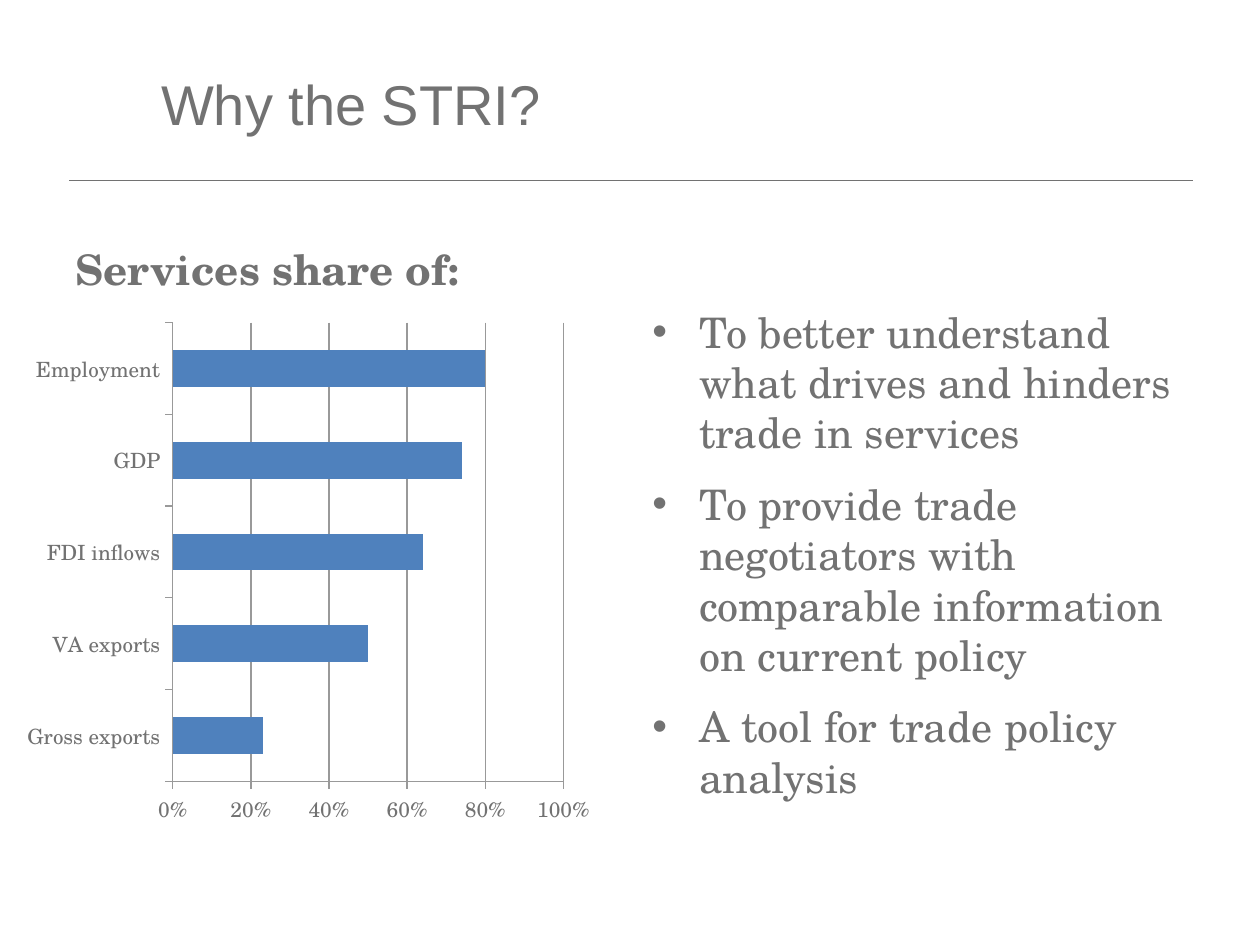
from lxml.etree import SubElement
from pptx import Presentation
from pptx.chart.data import CategoryChartData
from pptx.dml.color import RGBColor
from pptx.enum.chart import XL_CHART_TYPE as ChartType, XL_TICK_MARK as TickMark
from pptx.enum.shapes import MSO_CONNECTOR as Connector
from pptx.enum.text import MSO_ANCHOR as Anchor
from pptx.oxml import parse_xml
from pptx.oxml.ns import nsdecls, qn
from pptx.util import Inches, Pt

GREY = RGBColor(0x72, 0x72, 0x72)
GRID = RGBColor(0x99, 0x99, 0x99)
BLUE = RGBColor(0x4F, 0x81, 0xBD)
SERIF = "TeX Gyre Schola"
SHARES = {
    "Gross exports": 0.23,
    "VA exports": 0.5,
    "FDI inflows": 0.64,
    "GDP": 0.74,
    "Employment": 0.8,
}
REASONS = [
    "To better understand what drives and hinders trade in services",
    "To provide trade negotiators with comparable information on current policy",
    "A tool for trade policy analysis",
]


def style_font(font, size, name=SERIF, bold=False):
    """Apply the slide's grey text style to a font."""
    font.name, font.size, font.bold = name, Pt(size), bold
    font.color.rgb = GREY


def add_text(page, box, lines, anchor=Anchor.TOP):
    """Place a wrapped text box and return its paragraphs."""
    frame = page.shapes.add_textbox(*map(Inches, box)).text_frame
    frame.word_wrap = True
    frame.vertical_anchor = anchor
    frame.text = "\n".join(lines)
    return frame.paragraphs


def add_heading(page, box, text, anchor, size, name=SERIF, bold=False):
    """Place a one-line heading."""
    para = add_text(page, box, [text], anchor)[0]
    style_font(para.font, size, name, bold)


def add_rule(page, left, top, width):
    """Draw the thin line under the title."""
    start, end, height = Inches(left), Inches(left + width), Inches(top)
    rule = page.shapes.add_connector(Connector.STRAIGHT, start, height, end, height)
    rule.line.color.rgb = GREY
    rule.line.width = Pt(0.5)
    SubElement(rule._element.spPr, qn("a:effectLst"))


def add_reasons(page, box):
    """Place the bulleted list of reasons."""
    for index, para in enumerate(add_text(page, box, REASONS)):
        props = para._p.get_or_add_pPr()
        props.set("marL", str(Inches(0.37)))
        props.set("indent", str(-Inches(0.37)))
        para.space_before = Pt(6 if index else 0)
        para.space_after = Pt(6)
        color = SubElement(props, qn("a:buClr"))
        SubElement(color, qn("a:srgbClr"), val=str(GREY))
        SubElement(props, qn("a:buFont"), typeface="Arial")
        SubElement(props, qn("a:buChar"), char="•")
        style_font(para.font, 24)


def set_plot_area(chart, x, y, w, h):
    """Fix the inner plot area as fractions of the chart."""
    plot_area = chart._chartSpace.chart.plotArea
    for old in plot_area.findall(qn("c:layout")):
        plot_area.remove(old)
    layout = parse_xml(f"<c:layout {nsdecls('c')}/>")
    manual = SubElement(layout, qn("c:manualLayout"))
    settings = {"layoutTarget": "inner", "xMode": "edge", "yMode": "edge",
                "x": x, "y": y, "w": w, "h": h}
    for tag, value in settings.items():
        SubElement(manual, qn(f"c:{tag}"), val=str(value))
    plot_area.insert(0, layout)


def add_share_chart(page, box):
    """Place the bar chart of services shares."""
    data = CategoryChartData(number_format="0%")
    data.categories = list(SHARES)
    data.add_series("Series 1", list(SHARES.values()))
    chart = page.shapes.add_chart(
        ChartType.BAR_CLUSTERED, *map(Inches, box), data).chart
    chart.has_legend = False
    chart.has_title = False
    style_font(chart.font, 18)
    for axis in (chart.category_axis, chart.value_axis):
        style_font(axis.tick_labels.font, 12)
        axis.major_tick_mark = TickMark.OUTSIDE
        axis.minor_tick_mark = TickMark.NONE
        axis.format.line.color.rgb = GRID
    values = chart.value_axis
    values.minimum_scale, values.maximum_scale, values.major_unit = 0, 1, 0.2
    values.tick_labels.number_format = "0%"
    values.tick_labels.number_format_is_linked = False
    values.has_major_gridlines = True
    values.major_gridlines.format.line.color.rgb = GRID
    plot = chart.plots[0]
    plot.gap_width = 150
    plot.vary_by_categories = False
    fill = plot.series[0].format.fill
    fill.solid()
    fill.fore_color.rgb = BLUE
    set_plot_area(chart, 0.282, 0.035, 0.657, 0.843)


def main():
    """Build the slide and save the deck."""
    deck = Presentation()
    deck.slide_width, deck.slide_height = Inches(10), Inches(7.5)
    page = deck.slides.add_slide(deck.slide_layouts[6])
    add_rule(page, 0.55, 1.43, 8.92)
    add_heading(page, (1.18, 0.26, 8.11, 1.12), "Why the STRI?",
                Anchor.MIDDLE, 32, "Arial")
    add_heading(page, (0.5, 1.68, 4.42, 0.7), "Services share of:",
                Anchor.BOTTOM, 24, bold=True)
    add_reasons(page, (5.08, 2.38, 4.42, 4.32))
    add_share_chart(page, (0.04, 2.41, 4.72, 4.32))
    deck.save("out.pptx")


if __name__ == "__main__":
    main()
